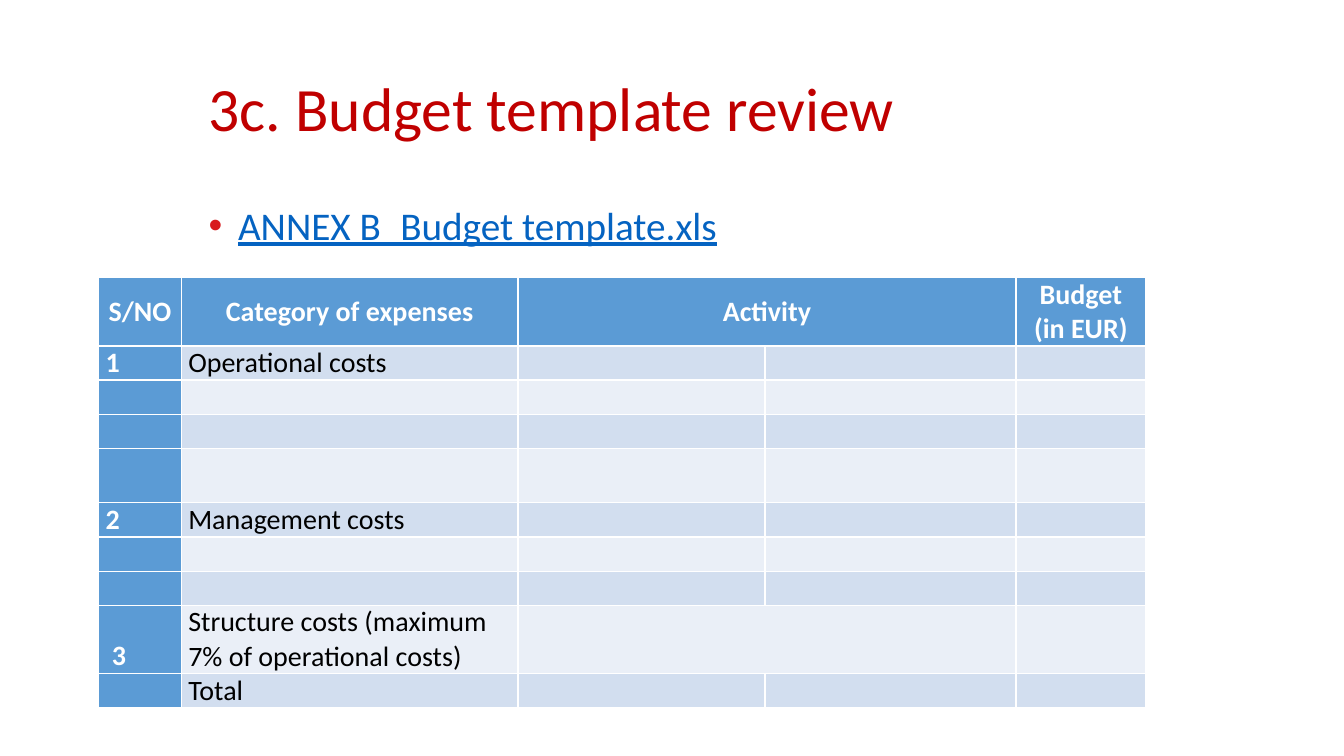
"""Build the budget template review slide."""
import pptx
import pptx.dml.color
import pptx.enum.text
import pptx.oxml
import pptx.oxml.ns
import pptx.util

Pt = pptx.util.Pt
ANCHOR = pptx.enum.text.MSO_ANCHOR
ALIGN = pptx.enum.text.PP_ALIGN


def color(hex_string):
    """Return the colour of a hex string."""
    return pptx.dml.color.RGBColor.from_string(hex_string)


def style_font(font, size, hex_string, bold=False):
    """Set the size, colour and weight of a Calibri font."""
    font.name = "Calibri"
    font.size = Pt(size)
    font.bold = bold
    font.color.rgb = color(hex_string)


deck = pptx.Presentation()
deck.slide_width, deck.slide_height = Pt(960), Pt(540)
page = deck.slides.add_slide(deck.slide_layouts[6])

title_box = page.shapes.add_textbox(Pt(142), Pt(27.5), Pt(680), Pt(104.4))
title_box.text_frame.word_wrap = True
title_box.text_frame.vertical_anchor = ANCHOR.MIDDLE
title = title_box.text_frame.paragraphs[0]
title.text = "3c. Budget template review"
title.line_spacing = 0.9
style_font(title.font, 44, "C00000")

body_box = page.shapes.add_textbox(Pt(142), Pt(144), Pt(680), Pt(342.7))
body_box.text_frame.word_wrap = True
annex = body_box.text_frame.paragraphs[0]
annex.text = "ANNEX B_Budget template.xls"
annex.line_spacing = 0.9
properties = annex._p.get_or_add_pPr()
properties.set("marL", str(Pt(21)))
properties.set("indent", str(Pt(-21)))
namespace = pptx.oxml.ns.nsdecls("a")
for bullet_part in (
    f'<a:buClr {namespace}><a:srgbClr val="D81A1C"/></a:buClr>',
    f'<a:buFont {namespace} typeface="Arial"/>',
    f'<a:buChar {namespace} char="•"/>',
):
    properties.append(pptx.oxml.parse_xml(bullet_part))
style_font(annex.font, 28, "0563C1")
annex.font.underline = True

column_widths = [59, 240.5, 176.4, 179.3, 92.8]
row_heights = [48.8, 24.4, 24.4, 24.4, 39, 24.4, 24.4, 24.4, 48.8, 24.4]
texts = {
    (0, 0): "S/NO",
    (0, 1): "Category of expenses",
    (0, 2): "Activity",
    (0, 4): "Budget (in EUR)",
    (1, 0): "1",
    (1, 1): "Operational costs",
    (5, 0): "2",
    (5, 1): "Management costs",
    (8, 0): "3",
    (8, 1): "Structure costs (maximum 7% of operational costs)",
    (9, 1): "Total",
}

budget = page.shapes.add_table(
    len(row_heights), len(column_widths), Pt(70.5), Pt(198.3),
    Pt(sum(column_widths)), Pt(sum(row_heights)),
).table
budget.first_col = True
for column, width in zip(budget.columns, column_widths):
    column.width = Pt(width)
for row, height in zip(budget.rows, row_heights):
    row.height = Pt(height)

for row_index in range(len(row_heights)):
    for column_index in range(len(column_widths)):
        cell = budget.cell(row_index, column_index)
        is_header = row_index == 0
        is_heading = is_header or column_index == 0
        band = "D2DEEF" if row_index % 2 else "EAEFF7"
        cell.fill.solid()
        cell.fill.fore_color.rgb = color("5B9BD5" if is_heading else band)
        cell.margin_left = cell.margin_right = Pt(5)
        cell.margin_top = cell.margin_bottom = 0
        cell.vertical_anchor = ANCHOR.MIDDLE if is_header else ANCHOR.BOTTOM
        para = cell.text_frame.paragraphs[0]
        para.text = texts.get((row_index, column_index), "")
        para.alignment = ALIGN.CENTER if is_header else ALIGN.LEFT
        style_font(para.font, 20, "FFFFFF" if is_heading else "000000", is_heading)

budget.cell(8, 0).margin_left = Pt(9.5)
for row_index in (0, 8):
    budget.cell(row_index, 2).merge(budget.cell(row_index, 3))

deck.save("out.pptx")
